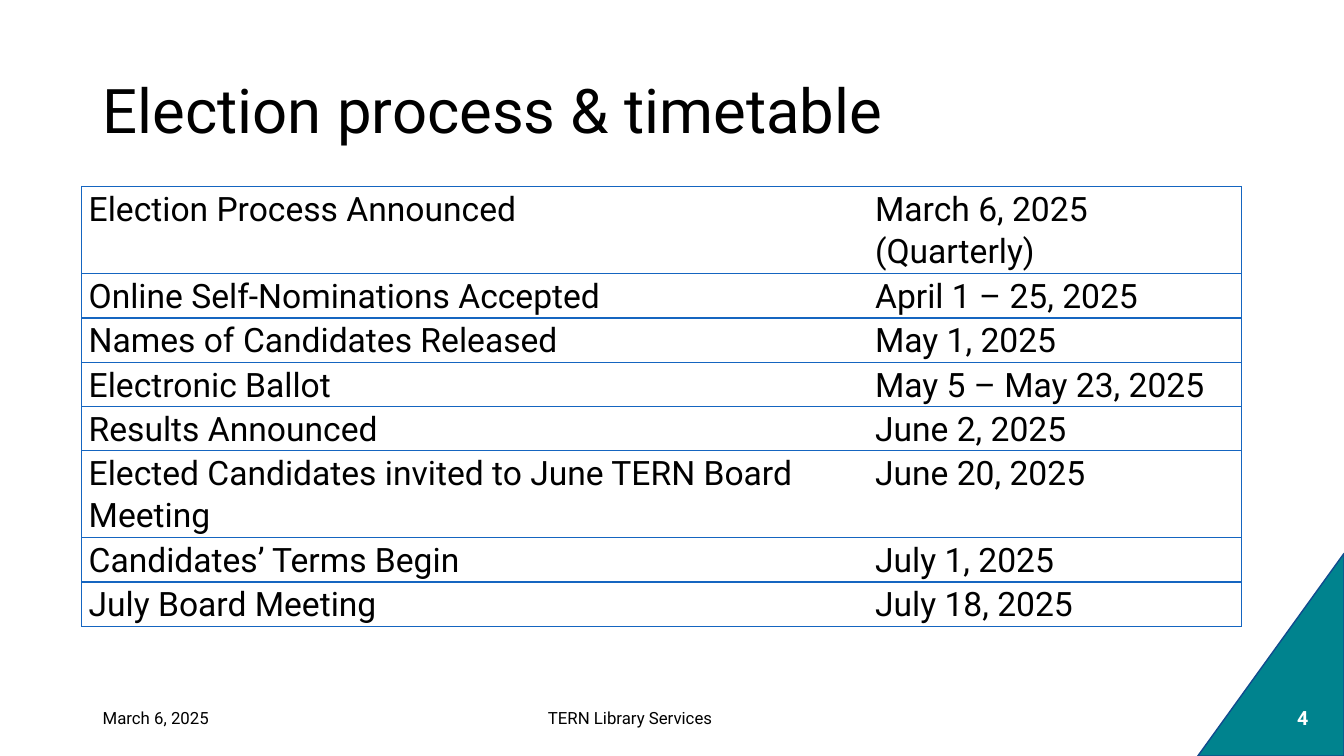
from lxml.etree import SubElement as Sub
from pptx import Presentation
from pptx.dml.color import RGBColor as RGB
from pptx.enum.shapes import MSO_SHAPE as Shape
from pptx.enum.text import MSO_ANCHOR as Anchor, PP_ALIGN as Align
from pptx.oxml.ns import qn
from pptx.util import Inches, Pt

FONT = "Roboto"
BLACK = RGB(0, 0, 0)
WHITE = RGB(255, 255, 255)
TEAL = RGB(0x00, 0x83, 0x8E)
NAVY = RGB(0x10, 0x4B, 0x8E)
BLUE = RGB(0x15, 0x65, 0xC0)

STEPS = [
    ("Election Process Announced", "March 6, 2025 (Quarterly)"),
    ("Online Self-Nominations Accepted", "April 1 – 25, 2025"),
    ("Names of Candidates Released", "May 1, 2025"),
    ("Electronic Ballot", "May 5 – May 23, 2025"),
    ("Results Announced", "June 2, 2025"),
    ("Elected Candidates invited to June TERN Board Meeting", "June 20, 2025"),
    ("Candidates’ Terms Begin", "July 1, 2025"),
    ("July Board Meeting", "July 18, 2025"),
]


def apply(item, **vals):
    for name, val in vals.items():
        setattr(item, name, val)


def write(frame, text, size, color=BLACK, bold=False, **para):
    """Put one formatted paragraph in a text frame."""
    frame.text = text
    line = frame.paragraphs[0]
    apply(line, **para)
    font = line.runs[0].font
    apply(font, name=FONT, size=Pt(size), bold=bold)
    font.color.rgb = color


def place(item, left, top, width, height):
    apply(item, left=Inches(left), top=Inches(top),
          width=Inches(width), height=Inches(height))


def add_corner(slide, left, top, width, height):
    # Turned a quarter left, so the right angle sits in the slide corner
    shape = slide.shapes.add_shape(Shape.RIGHT_TRIANGLE, 0, 0, 0, 0)
    place(shape, left, top, width, height)
    shape.rotation = 270
    shape.shadow.inherit = False
    shape.fill.solid()
    shape.fill.fore_color.rgb = TEAL
    shape.line.color.rgb = NAVY
    shape.line.width = Pt(1)


def add_title(slide, left, top, width, height):
    title = slide.shapes.title
    place(title, left, top, width, height)
    apply(title.text_frame, word_wrap=True, vertical_anchor=Anchor.MIDDLE)
    write(title.text_frame, "Election process & timetable", 44,
          alignment=Align.LEFT, line_spacing=0.9)


def add_foot(slide, top, height):
    # Date, organisation and page number share one row
    for left, width, text, size, color, bold, align in (
        (0.92, 3, "March 6, 2025", 12, BLACK, False, Align.LEFT),
        (4, 4.5, "TERN Library Services", 12, BLACK, False, Align.CENTER),
        (12.63, 0.58, "4", 14, WHITE, True, Align.CENTER),
    ):
        box = slide.shapes.add_textbox(0, 0, 0, 0)
        place(box, left, top, width, height)
        apply(box.text_frame, word_wrap=True, vertical_anchor=Anchor.MIDDLE)
        write(box.text_frame, text, size, color, bold, alignment=align)


def edge(cell, sides):
    """Rule the named sides of a cell and clear the others."""
    props = cell._tc.get_or_add_tcPr()
    for side in "LRTB":
        line = Sub(props, qn(f"a:ln{side}"), w=str(Pt(1)))
        if side in sides:
            fill = Sub(line, qn("a:solidFill"))
            Sub(fill, qn("a:srgbClr"), val=str(BLUE))
        else:
            Sub(line, qn("a:noFill"))


def add_dates(slide, left, top, width, height):
    frame = slide.shapes.add_table(len(STEPS), 2, Inches(left), Inches(top),
                                   Inches(width), Inches(height))
    table = frame.table
    apply(table, first_row=False, horz_banding=False)
    last = 3.7
    for col, size in zip(table.columns, (width - last, last)):
        col.width = Inches(size)
    for row, texts in zip(table.rows, STEPS):
        row.height = Inches(0.2)  # rows grow to fit their text
        for cell, text, sides in zip(row.cells, texts, ("LTB", "RTB")):
            apply(cell, margin_left=Inches(0.07), margin_right=Inches(0.07),
                  margin_top=Inches(0.01), margin_bottom=0)
            write(cell.text_frame, text, 24, line_spacing=1.07,
                  space_after=Pt(8))
            edge(cell, sides)
            cell.fill.solid()
            cell.fill.fore_color.rgb = WHITE
    frame.height = Inches(height)


def main():
    deck = Presentation()
    apply(deck, slide_width=Inches(13.33), slide_height=Inches(7.5))
    slide = deck.slides.add_slide(deck.slide_layouts[5])
    add_corner(slide, 11.6, 5.77, 2.01, 1.45)
    add_title(slide, 0.92, 0.4, 11.5, 1.45)
    add_foot(slide, 6.92, 0.4)
    add_dates(slide, 0.81, 1.85, 11.5, 3.81)
    deck.save("out.pptx")


if __name__ == "__main__":
    main()
